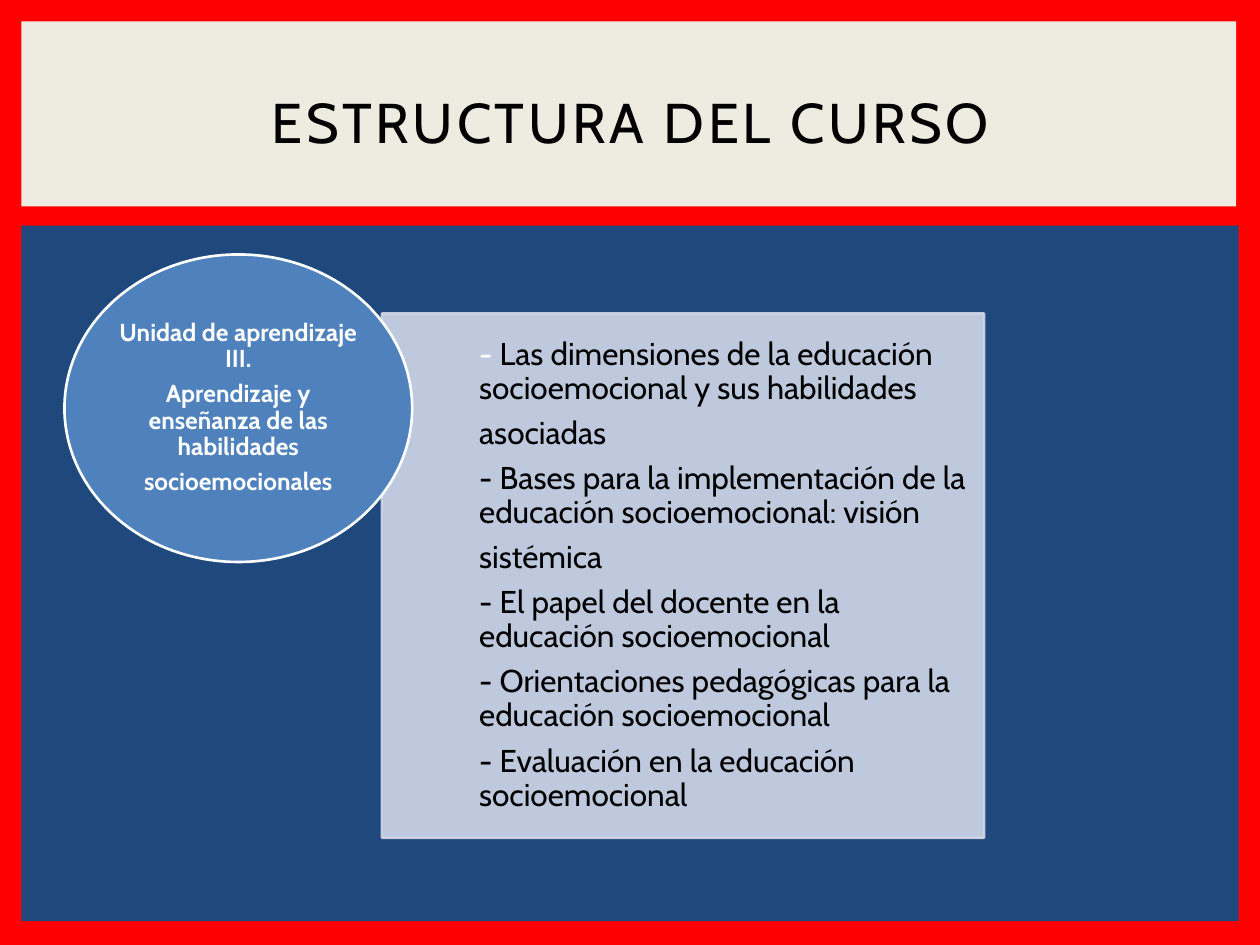
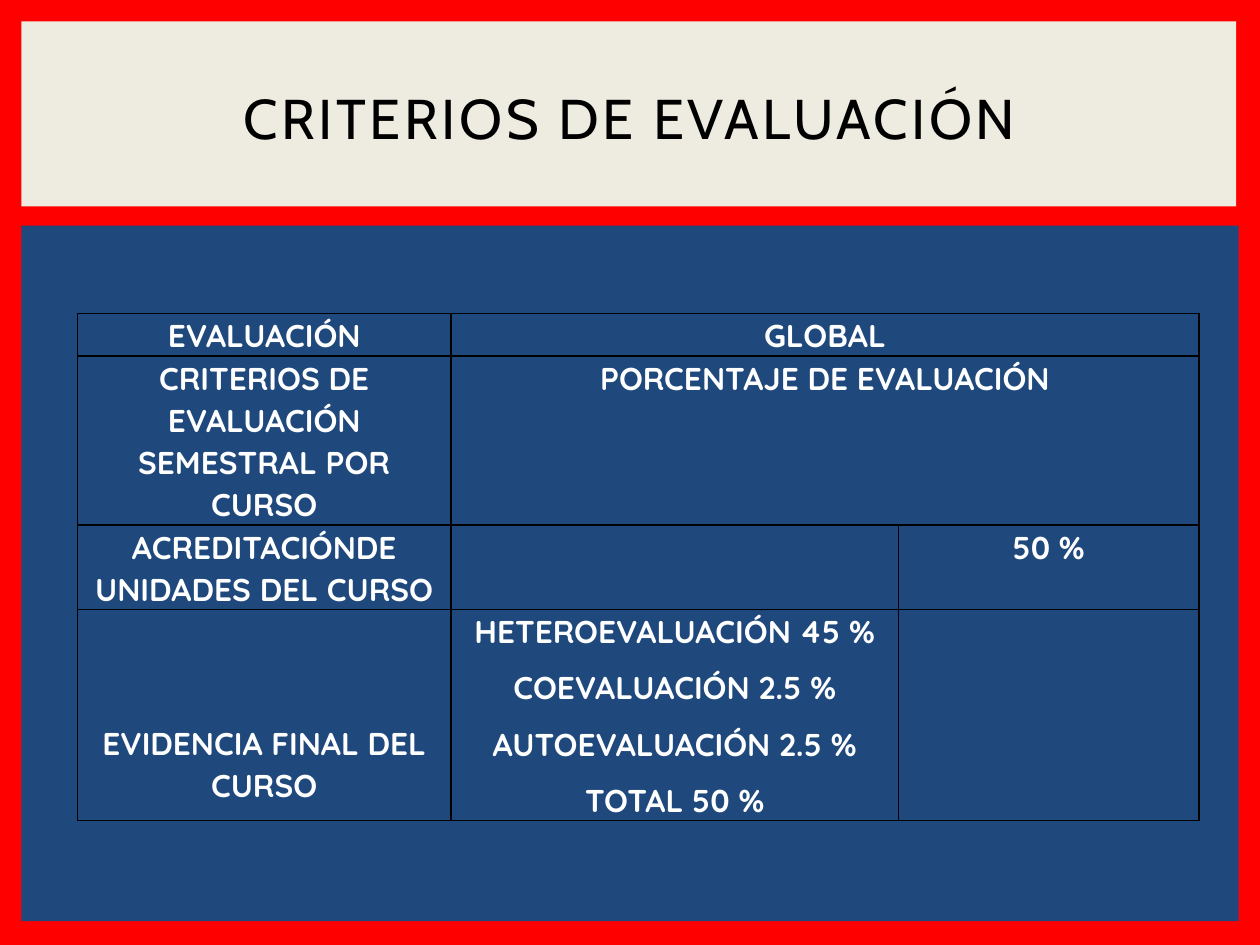
"""Build the course structure and evaluation criteria slides."""
from dataclasses import dataclass
from typing import Any, NamedTuple, Optional, Sequence

import lxml.etree
import pptx
import pptx.dml.color
import pptx.enum.shapes
import pptx.enum.text
import pptx.oxml.ns
import pptx.util

Cm, Pt = pptx.util.Cm, pptx.util.Pt
qn = pptx.oxml.ns.qn
RGB = pptx.dml.color.RGBColor.from_string
SHAPE = pptx.enum.shapes.MSO_SHAPE
ANCHOR = pptx.enum.text.MSO_ANCHOR
ALIGN = pptx.enum.text.PP_ALIGN


@dataclass(frozen=True)
class Theme:
    frame: str = "FF0000"
    body: str = "1F497D"
    header: str = "EEECE1"
    unit: str = "4F81BD"
    panel: str = "D0D8E8"
    light: str = "FFFFFF"
    dark: str = "000000"
    font: str = "Cabin"
    table_font: str = "Quicksand"
    title_size: float = 32
    text_size: float = 18
    unit_size: float = 14


class Box(NamedTuple):
    left: float
    top: float
    width: float
    height: float


class Block(NamedTuple):
    kind: Any
    box: Box
    fill: str
    line: Optional[str] = None
    alpha: int = 100


class Entry(NamedTuple):
    row: int
    col: int
    lines: Sequence[str]
    span: int = 1
    bottom: Optional[float] = None


T = Theme()
BANDS = [
    Block(SHAPE.RECTANGLE, Box(0.43, 4.55, 24.54, 14.02), T.body),
    Block(SHAPE.RECTANGLE, Box(0.43, 0.43, 24.49, 3.73), T.header),
]
PANEL = Block(SHAPE.RECTANGLE, Box(7.7, 6.32, 12.14, 10.57), T.panel, T.panel, 90)
UNIT = Block(SHAPE.OVAL, Box(1.3, 5.13, 7.01, 6.2), T.unit, T.light)
TOPICS = [
    "Las dimensiones de la educación socioemocional y sus habilidades",
    "asociadas",
    "- Bases para la implementación de la educación socioemocional: visión",
    "sistémica",
    "- El papel del docente en la educación socioemocional",
    "- Orientaciones pedagógicas para la educación socioemocional",
    "- Evaluación en la educación socioemocional",
]
UNIT_LINES = [
    "Unidad de aprendizaje III.",
    "Aprendizaje y enseñanza de las habilidades",
    "socioemocionales",
]
TABLE_AT = (1.56, 6.32)
COLS = [7.53, 9.02, 6.06]
ROWS = [0.85, 3.41, 1.7, 4.25]
ENTRIES = [
    Entry(0, 0, ["EVALUACIÓN"]),
    Entry(0, 1, ["GLOBAL"], span=2),
    Entry(1, 0, ["CRITERIOS DE EVALUACIÓN SEMESTRAL POR CURSO"]),
    Entry(1, 1, ["PORCENTAJE DE EVALUACIÓN"], span=2),
    Entry(2, 0, ["ACREDITACIÓNDE UNIDADES DEL CURSO"]),
    Entry(2, 2, ["50 %"]),
    Entry(3, 0, ["EVIDENCIA FINAL DEL CURSO"], bottom=0.3),
    Entry(3, 1, ["HETEROEVALUACIÓN 45 %", "COEVALUACIÓN 2.5 %",
                 "AUTOEVALUACIÓN 2.5 %", "TOTAL 50 %"]),
]


def write(tf: Any, lines: Sequence[str], *, size: float, color: str, font: str = T.font,
          bold: bool = False, align: Any = ALIGN.CENTER, line: float = 1.0,
          after: float = 0, tracking: float = 0, lead: str = "") -> None:
    for i, text in enumerate(lines):
        p = tf.paragraphs[0] if i == 0 else tf.add_paragraph()
        p.alignment, p.line_spacing = align, line
        p.space_before, p.space_after = Pt(0), Pt(after)
        runs = [(text, color)]
        if lead and i == 0:
            runs.insert(0, (lead, T.light))
        for part, tint in runs:
            r = p.add_run()
            r.text = part
            r.font.name, r.font.size, r.font.bold = font, Pt(size), bold
            r.font.color.rgb = RGB(tint)
            if tracking:
                r.font._element.set("spc", str(int(tracking * 100)))


def set_frame(tf: Any, left: float = 0, other: float = 0) -> None:
    tf.word_wrap = True
    tf.vertical_anchor = ANCHOR.MIDDLE
    tf.margin_left = Cm(left)
    tf.margin_top = tf.margin_right = tf.margin_bottom = Cm(other)


def set_alpha(fill_parent: Any, alpha: int) -> None:
    for clr in fill_parent.iter(qn("a:srgbClr")):
        lxml.etree.SubElement(clr, qn("a:alpha")).set("val", str(alpha * 1000))


def draw(s: Any, block: Block) -> Any:
    sp = s.shapes.add_shape(block.kind, *map(Cm, block.box))
    sp.shadow.inherit = False
    sp.fill.solid()
    sp.fill.fore_color.rgb = RGB(block.fill)
    if block.line:
        sp.line.color.rgb = RGB(block.line)
        sp.line.width = Pt(1.5)
    else:
        sp.line.fill.background()
    if block.alpha < 100:
        set_alpha(sp.element.spPr, block.alpha)
    return sp


def add_slide(prs: Any, title: str, left: float, top: float) -> Any:
    s = prs.slides.add_slide(prs.slide_layouts[5])
    sp = s.shapes.title
    sp.left, sp.top, sp.width, sp.height = map(Cm, (left, top, 23.29, 2.92))
    tf = sp.text_frame
    tf.auto_size = pptx.enum.text.MSO_AUTO_SIZE.NONE
    tf.vertical_anchor = ANCHOR.MIDDLE
    write(tf, [title], size=T.title_size, color=T.dark, tracking=2)
    return s


def style_master(prs: Any, s: Any) -> None:
    master = prs.slide_master
    master.background.fill.solid()
    master.background.fill.fore_color.rgb = RGB(T.frame)
    for i, band in enumerate(BANDS):
        el = draw(s, band).element
        el.nvSpPr.cNvPr.set("id", str(100 + i))
        master.shapes.element.insert(2 + i, el)


def add_borders(cell: Any) -> None:
    tc_pr = cell._tc.get_or_add_tcPr()
    for i, side in enumerate(("lnL", "lnR", "lnT", "lnB")):
        ln = lxml.etree.Element(qn(f"a:{side}"), w=str(Pt(1)))
        fill = lxml.etree.SubElement(ln, qn("a:solidFill"))
        lxml.etree.SubElement(fill, qn("a:srgbClr"), val=T.dark)
        tc_pr.insert(i, ln)


def add_criteria(s: Any) -> None:
    size = (sum(COLS), sum(ROWS))
    table = s.shapes.add_table(len(ROWS), len(COLS), *map(Cm, TABLE_AT + size)).table
    table.first_row = table.horz_banding = False
    for col, width in zip(table.columns, COLS):
        col.width = Cm(width)
    for row, height in zip(table.rows, ROWS):
        row.height = Cm(height)
    for cell in table.iter_cells():
        cell.margin_left = cell.margin_right = Cm(0.18)
        cell.margin_top = cell.margin_bottom = Cm(0)
        cell.fill.background()
        add_borders(cell)
    for e in ENTRIES:
        cell = table.cell(e.row, e.col)
        if e.span > 1:
            cell.merge(table.cell(e.row, e.col + e.span - 1))
        if e.bottom is not None:
            cell.vertical_anchor = ANCHOR.BOTTOM
            cell.margin_bottom = Cm(e.bottom)
        write(cell.text_frame, e.lines, size=T.text_size, color=T.light,
              font=T.table_font, bold=True, line=1.07, after=8)


def add_structure(s: Any) -> None:
    tf = draw(s, PANEL).text_frame
    set_frame(tf, left=1.96, other=0.36)
    write(tf, TOPICS, size=T.text_size, color=T.dark, align=ALIGN.LEFT,
          line=0.9, after=0.35 * T.text_size, lead="- ")
    tf = draw(s, UNIT).text_frame
    set_frame(tf)
    write(tf, UNIT_LINES, size=T.unit_size, color=T.light, bold=True,
          line=0.9, after=0.35 * T.unit_size)


def main() -> None:
    prs = pptx.Presentation()
    prs.slide_width, prs.slide_height = Cm(25.4), Cm(19.05)
    s = add_slide(prs, "ESTRUCTURA DEL CURSO", 1.07, 0.99)
    style_master(prs, s)
    add_structure(s)
    s = add_slide(prs, "CRITERIOS DE EVALUACIÓN ", 1.22, 0.91)
    add_criteria(s)
    prs.save("out.pptx")


if __name__ == "__main__":
    main()
